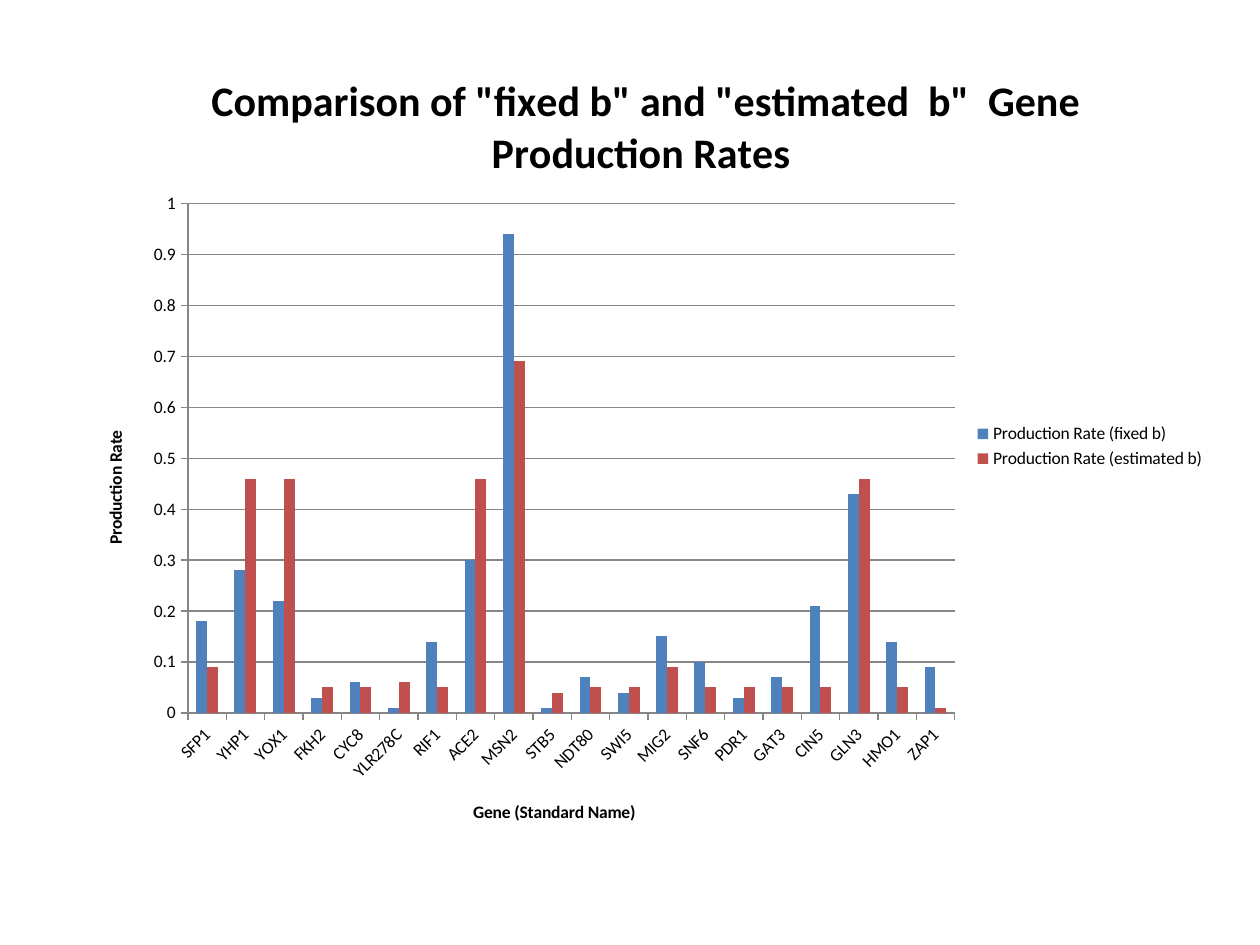
from lxml.etree import SubElement
from pptx import Presentation
from pptx.chart.data import CategoryChartData
from pptx.dml.color import RGBColor
from pptx.enum.chart import XL_CHART_TYPE as ChartType
from pptx.enum.chart import XL_LEGEND_POSITION as LegendPos
from pptx.enum.chart import XL_TICK_MARK as TickMark
from pptx.oxml.ns import qn
from pptx.util import Pt

BLACK = RGBColor(0x00, 0x00, 0x00)
GRAY = RGBColor(0x86, 0x86, 0x86)
BLUE = RGBColor(0x4F, 0x81, 0xBD)
RED = RGBColor(0xC0, 0x50, 0x4D)

TITLE = 'Comparison of "fixed b" and "estimated  b"  Gene Production Rates '
GENES = ["SFP1", "YHP1", "YOX1", "FKH2", "CYC8", "YLR278C", "RIF1",
         "ACE2", "MSN2", "STB5", "NDT80", "SWI5", "MIG2", "SNF6",
         "PDR1", "GAT3", "CIN5", "GLN3", "HMO1", "ZAP1"]
RATES = [
    ("Production Rate (fixed b)", BLUE,
     [0.18, 0.28, 0.22, 0.03, 0.06, 0.01, 0.14, 0.3, 0.94, 0.01,
      0.07, 0.04, 0.15, 0.1, 0.03, 0.07, 0.21, 0.43, 0.14, 0.09]),
    ("Production Rate (estimated b)", RED,
     [0.09, 0.46, 0.46, 0.05, 0.05, 0.06, 0.05, 0.46, 0.69, 0.04,
      0.05, 0.05, 0.09, 0.05, 0.05, 0.05, 0.05, 0.46, 0.05, 0.01]),
]


class Deck:
    font = "Calibri"
    size = 10

    def __init__(self, width, height):
        self.prs = Presentation()
        self.prs.slide_width, self.prs.slide_height = Pt(width), Pt(height)
        self.s = self.prs.slides.add_slide(self.prs.slide_layouts[6])

    def style(self, font, size, bold=False):
        font.name, font.size, font.bold = self.font, Pt(size), bold
        font.color.rgb = BLACK

    def title(self, owner, text, size):
        tf = owner.text_frame
        r = tf.paragraphs[0].add_run()
        r.text = text
        self.style(r.font, size, True)
        return tf

    def rotate(self, body, degrees):
        props = body.find(qn("a:bodyPr"))
        props.set("rot", str(degrees * 60000))
        props.set("vert", "horz")

    def axis(self, axis, text):
        axis.major_tick_mark = TickMark.OUTSIDE
        axis.minor_tick_mark = TickMark.NONE
        axis.format.line.color.rgb = GRAY
        self.style(axis.tick_labels.font, self.size)
        return self.title(axis.axis_title, text, self.size)

    def place_plot(self, chart, x, y, w, h):
        area = chart.plots[0]._element.getparent()
        layout = area.find(qn("c:layout"))
        if layout is not None:
            area.remove(layout)
        layout = SubElement(area, qn("c:layout"))
        area.insert(0, layout)
        manual = SubElement(layout, qn("c:manualLayout"))
        settings = [("layoutTarget", "inner"), ("xMode", "edge"),
                    ("yMode", "edge"), ("x", x), ("y", y), ("w", w), ("h", h)]
        for tag, value in settings:
            SubElement(manual, qn(f"c:{tag}")).set("val", str(value))

    def column_chart(self, x, y, w, h, title, categories, series):
        data = CategoryChartData()
        data.categories = categories
        for name, _, values in series:
            data.add_series(name, values)
        chart = self.s.shapes.add_chart(
            ChartType.COLUMN_CLUSTERED, Pt(x), Pt(y), Pt(w), Pt(h), data).chart
        self.style(chart.font, self.size)
        chart.has_title = True
        self.title(chart.chart_title, title, 24)
        chart.chart_title.include_in_layout = False

        plot = chart.plots[0]
        plot.gap_width, plot.overlap = 150, 0
        plot.vary_by_categories = False
        for item, (_, color, _) in zip(plot.series, series):
            item.format.fill.solid()
            item.format.fill.fore_color.rgb = color

        genes = chart.category_axis
        self.axis(genes, "Gene (Standard Name)")
        self.rotate(genes._element.find(qn("c:txPr")), -45)

        rates = chart.value_axis
        tf = self.axis(rates, "Production Rate")
        self.rotate(tf._txBody, -90)
        rates.minimum_scale, rates.maximum_scale = 0, 1
        rates.major_unit = 0.1
        rates.has_major_gridlines = True
        rates.major_gridlines.format.line.color.rgb = GRAY
        rates.tick_labels.number_format = "General"
        rates.tick_labels.number_format_is_linked = False

        chart.has_legend = True
        chart.legend.position = LegendPos.RIGHT
        chart.legend.include_in_layout = False
        self.style(chart.legend.font, self.size)
        self.place_plot(chart, 0.1, 0.2, 0.67, 0.63)


def main():
    deck = Deck(720, 540)
    deck.column_chart(42, 24, 654, 462, TITLE, GENES, RATES)
    deck.prs.save("out.pptx")


if __name__ == "__main__":
    main()
